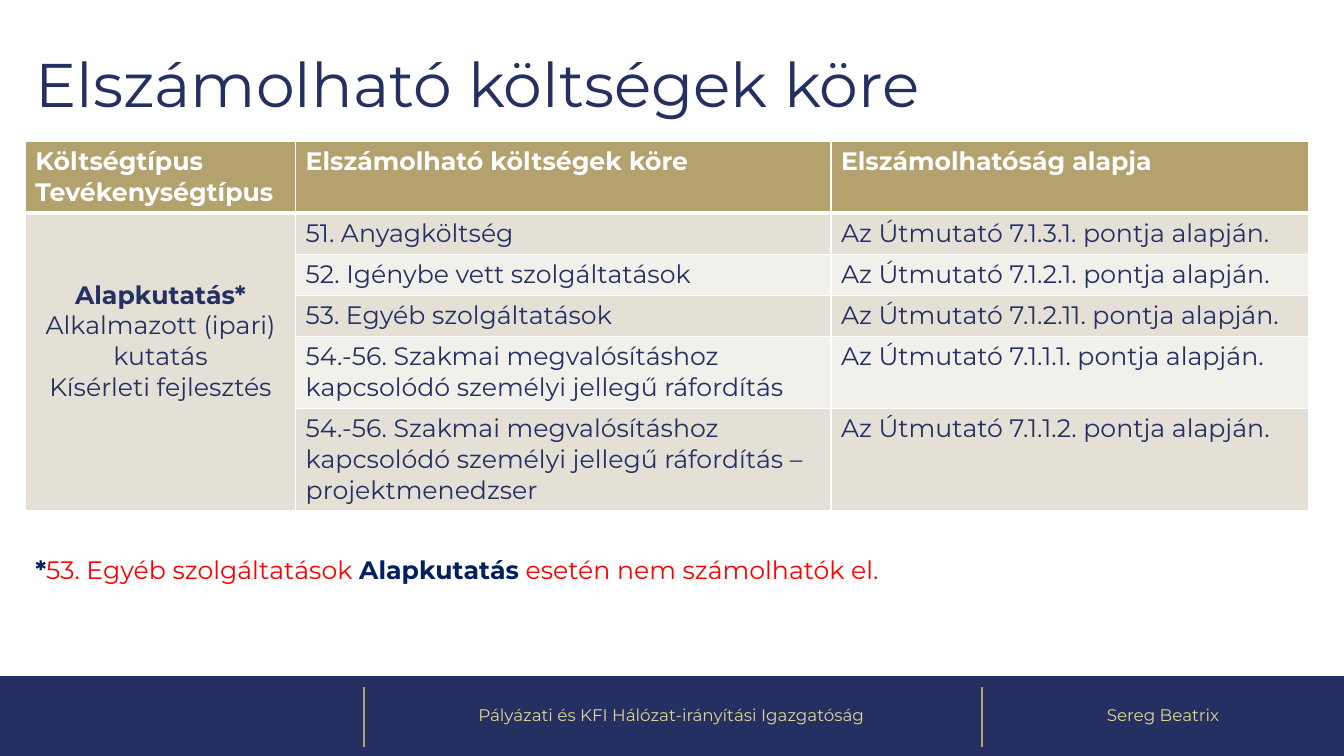
import pptx
import pptx.util
import pptx.dml.color
import pptx.enum.shapes
import pptx.enum.text
import pptx.oxml.ns
from lxml import etree

Cm, Pt = pptx.util.Cm, pptx.util.Pt
Align = pptx.enum.text.PP_ALIGN
Anchor = pptx.enum.text.MSO_ANCHOR
qn = pptx.oxml.ns.qn

# Content
TITLE = "Elszámolható költségek köre"
HEAD = [["Költségtípus", "Tevékenységtípus"],
        ["Elszámolható költségek köre"], ["Elszámolhatóság alapja"]]
TYPES = ["Alapkutatás*", "Alkalmazott (ipari) kutatás", "Kísérleti fejlesztés"]
STAFF = "54.-56. Szakmai megvalósításhoz kapcsolódó személyi jellegű ráfordítás"
# cost, section of the guide, lines of text
COSTS = [("51. Anyagköltség", "7.1.3.1.", 1),
         ("52. Igénybe vett szolgáltatások", "7.1.2.1.", 1),
         ("53. Egyéb szolgáltatások", "7.1.2.11.", 1),
         (STAFF, "7.1.1.1.", 2),
         (STAFF + " – projektmenedzser", "7.1.1.2.", 3)]
BASIS = "Az Útmutató {} pontja alapján."
NOTE = [("*", True), ("53. Egyéb szolgáltatások ", False),
        ("Alapkutatás", True), (" esetén nem számolhatók el.", False)]
# text, left, width
FOOT = [("Pályázati és KFI Hálózat-irányítási Igazgatóság", 9.12, 15.6),
        ("Sereg Beatrix", 24.74, 9.14)]

THEME = {"font": "Montserrat", "navy": "242F62", "gold": "B3A16E",
         "pale": "E3D496", "bands": ("E5E0D5", "F2F0EB"), "white": "FFFFFF",
         "dark": "002060", "red": "FF0000", "title": 44, "body": 18, "foot": 12}

# Layout in cm
WIDE, HIGH = 33.87, 19.05
LEFT = 0.64
COLS = (6.81, 13.49, 12.04)
LINE, PAD = 0.775, 0.26
BAR = 17.04
RULES = (9.17, 24.74)


def rgb(code):
    return pptx.dml.color.RGBColor.from_string(code)


def add_run(para, text, size, color, bold=False):
    run = para.add_run()
    run.text = text
    font = run.font
    font.name, font.size, font.bold = THEME["font"], Pt(size), bold
    font.color.rgb = rgb(color)


def add_box(slide, x, y, w, h, runs, size, align=Align.LEFT,
            anchor=Anchor.MIDDLE, space=0.9):
    box = slide.shapes.add_textbox(Cm(x), Cm(y), Cm(w), Cm(h))
    frame = box.text_frame
    frame.word_wrap, frame.vertical_anchor = True, anchor
    para = frame.paragraphs[0]
    para.alignment, para.line_spacing = align, space
    for text, color, bold in runs:
        add_run(para, text, size, color, bold)


def set_edges(cell, low):
    props = cell._tc.get_or_add_tcPr()
    for spot, (side, width) in enumerate(
            (("lnL", 1), ("lnR", 1), ("lnT", 1), ("lnB", low))):
        edge = etree.Element(qn("a:" + side), w=str(Pt(width)))
        fill = etree.SubElement(edge, qn("a:solidFill"))
        etree.SubElement(fill, qn("a:srgbClr"), val=THEME["white"])
        props.insert(spot, edge)


def fill_cell(cell, lines, color, fill, bold=(), align=Align.LEFT, low=1):
    cell.fill.solid()
    cell.fill.fore_color.rgb = rgb(fill)
    set_edges(cell, low)
    frame = cell.text_frame
    for spot, text in enumerate(lines):
        para = frame.add_paragraph() if spot else frame.paragraphs[0]
        para.alignment = align
        add_run(para, text, THEME["body"], color, text in bold)


def add_costs(slide):
    counts = [2] + [cost[2] for cost in COSTS]
    highs = [PAD + LINE * count for count in counts]
    table = slide.shapes.add_table(
        len(highs), len(COLS), Cm(LEFT), Cm(3.56),
        Cm(sum(COLS)), Cm(sum(highs))).table
    for col, width in zip(table.columns, COLS):
        col.width = Cm(width)
    for row, high in zip(table.rows, highs):
        row.height = Cm(high)
    for spot, lines in enumerate(HEAD):
        fill_cell(table.cell(0, spot), lines, THEME["white"], THEME["gold"],
                  bold=lines, low=3)
    for num, (cost, part, count) in enumerate(COSTS, 1):
        fill = THEME["bands"][(num - 1) % 2]
        for spot, text in enumerate((cost, BASIS.format(part)), 1):
            fill_cell(table.cell(num, spot), [text], THEME["navy"], fill)
    # Activity types span all cost rows, two lines down
    side = table.cell(1, 0)
    side.merge(table.cell(len(COSTS), 0))
    fill_cell(side, TYPES, THEME["navy"], THEME["bands"][0],
              bold=TYPES[:1], align=Align.CENTER)
    side.margin_top = Cm(PAD / 2 + 2 * LINE)


def add_foot(slide):
    kind = pptx.enum.shapes.MSO_SHAPE.RECTANGLE
    bar = slide.shapes.add_shape(kind, 0, Cm(BAR), Cm(WIDE), Cm(HIGH - BAR))
    bar.shadow.inherit = False
    bar.fill.solid()
    bar.fill.fore_color.rgb = rgb(THEME["navy"])
    bar.line.fill.background()
    for x in RULES:
        rule = slide.shapes.add_connector(
            pptx.enum.shapes.MSO_CONNECTOR.STRAIGHT,
            Cm(x), Cm(17.32), Cm(x), Cm(18.82))
        rule.line.color.rgb = rgb(THEME["gold"])
        rule.line.width = Pt(1.5)
        etree.SubElement(rule._element.spPr, qn("a:effectLst"))
    for text, x, w in FOOT:
        add_box(slide, x, BAR, w, HIGH - BAR, [(text, THEME["pale"], False)],
                THEME["foot"], Align.CENTER)


def main():
    deck = pptx.Presentation()
    deck.slide_width, deck.slide_height = Cm(WIDE), Cm(HIGH)
    slide = deck.slides.add_slide(deck.slide_layouts[6])
    add_foot(slide)
    add_box(slide, LEFT, 0.36, 31.72, 3.68,
            [(TITLE, THEME["navy"], False)], THEME["title"])
    add_costs(slide)
    # Footnote
    runs = [(text, THEME["dark" if bold else "red"], bold)
            for text, bold in NOTE]
    add_box(slide, LEFT, 13.84, 24.33, 1.02, runs, THEME["body"],
            anchor=Anchor.TOP, space=1.0)
    deck.save("out.pptx")


if __name__ == "__main__":
    main()
